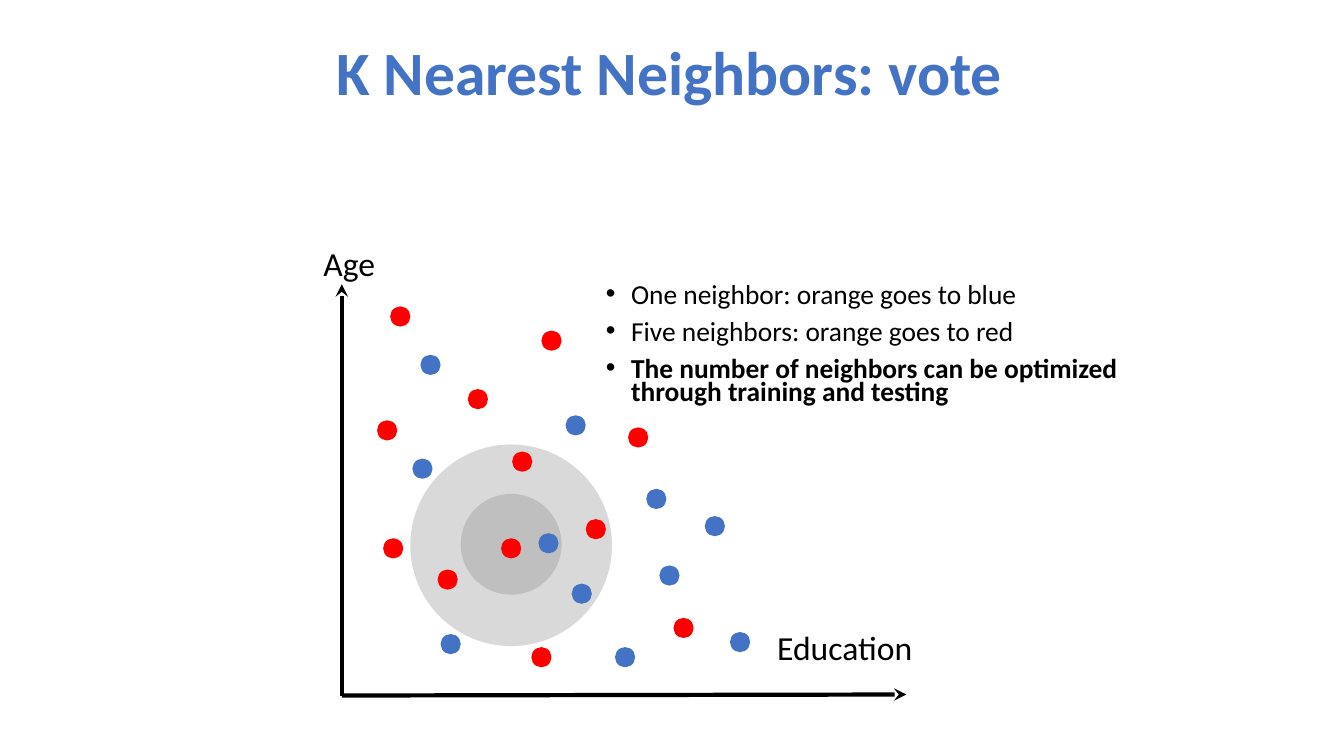
from dataclasses import dataclass

from lxml.etree import SubElement
from pptx import Presentation
from pptx.dml.color import RGBColor
from pptx.enum.shapes import MSO_CONNECTOR, MSO_SHAPE
from pptx.enum.text import MSO_ANCHOR, MSO_AUTO_SIZE, PP_ALIGN
from pptx.oxml.ns import qn
from pptx.util import Inches, Pt


@dataclass(frozen=True)
class Theme:
    font: str = "Calibri"
    ink: str = "000000"
    blue: str = "4472C4"
    red: str = "FF0000"
    outer: str = "D9D9D9"
    inner: str = "BFBFBF"
    title: float = 44
    label: float = 24
    body: float = 19.6
    axis: float = 3
    dot: float = 0.2


@dataclass(frozen=True)
class Disc:
    left: float
    top: float
    size: float
    color: str


@dataclass(frozen=True)
class Axis:
    end: tuple[float, float]
    name: str
    box: tuple[float, float, float, float]


THEME = Theme()
ORIGIN = (3.39, 6.9)
AXES = [
    Axis((8.99, 6.89), "Education", (7.61, 6.17, 2.17, 0.5)),
    Axis((3.39, 2.82), "Age", (3.11, 2.36, 1.56, 0.5)),
]
RINGS = [
    Disc(4.07, 4.41, 2, THEME.outer),
    Disc(4.57, 4.9, 1, THEME.inner),
]
BLUES = [
    (5.61, 4.12), (5.34, 5.29), (5.67, 5.79), (6.54, 5.61),
    (6.99, 5.12), (4.17, 3.52), (6.41, 4.85), (4.37, 6.29),
    (7.24, 6.27), (4.09, 4.55), (6.1, 6.42),
]
REDS = [
    (4.34, 5.65), (6.23, 4.24), (3.74, 4.17), (5.08, 4.48),
    (5.37, 3.28), (6.68, 6.13), (3.87, 3.04), (5.81, 5.15),
    (5.27, 6.42), (4.64, 3.86), (3.8, 5.34),
]
QUERY = Disc(4.97, 5.34, THEME.dot, THEME.red)
NOTES = [
    ("One neighbor: orange goes to blue", False),
    ("Five neighbors: orange goes to red", False),
    ("The number of neighbors can be optimized through training and testing", True),
]


def place(shape, left: float, top: float, width: float, height: float) -> None:
    shape.left, shape.top = Inches(left), Inches(top)
    shape.width, shape.height = Inches(width), Inches(height)


def write(para, text: str, *, size: float, color: str = THEME.ink,
          bold: bool = False, align=None, pitch=None, before=None) -> None:
    run = para.add_run()
    run.text = text
    font = run.font
    font.name, font.size, font.bold = THEME.font, Pt(size), bold
    font.color.rgb = RGBColor.from_string(color)
    para.alignment = align
    para.line_spacing = pitch
    para.space_before = before


def bullet(para, indent: float) -> None:
    props = para._p.get_or_add_pPr()
    props.set("marL", str(Inches(indent)))
    props.set("indent", str(-Inches(indent)))
    SubElement(props, qn("a:buFont")).set("typeface", "Arial")
    SubElement(props, qn("a:buChar")).set("char", "•")


def draw_disc(shapes, disc: Disc) -> None:
    oval = shapes.add_shape(MSO_SHAPE.OVAL, Inches(disc.left), Inches(disc.top),
                            Inches(disc.size), Inches(disc.size))
    oval.shadow.inherit = False
    oval.fill.solid()
    oval.fill.fore_color.rgb = RGBColor.from_string(disc.color)
    oval.line.fill.background()


def draw_class(shapes, spots: list[tuple[float, float]], color: str) -> None:
    """Draw all points of one class as a group."""
    group = shapes.add_group_shape()
    for left, top in spots:
        draw_disc(group.shapes, Disc(left, top, THEME.dot, color))


def draw_axis(shapes, axis: Axis) -> None:
    ends = [Inches(value) for value in ORIGIN + axis.end]
    line = shapes.add_connector(MSO_CONNECTOR.STRAIGHT, *ends)
    line.line.color.rgb = RGBColor.from_string(THEME.ink)
    line.line.width = Pt(THEME.axis)
    SubElement(line.line._get_or_add_ln(), qn("a:tailEnd")).set("type", "stealth")
    SubElement(line._element.spPr, qn("a:effectLst"))

    label = shapes.add_textbox(*[Inches(value) for value in axis.box])
    frame = label.text_frame
    frame.word_wrap = True
    frame.auto_size = MSO_AUTO_SIZE.SHAPE_TO_FIT_TEXT
    write(frame.paragraphs[0], axis.name, size=THEME.label)


def fill_title(shape) -> None:
    place(shape, 0.89, 0.02, 11.5, 1.45)
    frame = shape.text_frame
    frame.auto_size = MSO_AUTO_SIZE.NONE
    frame.vertical_anchor = MSO_ANCHOR.MIDDLE
    write(frame.paragraphs[0], "K Nearest Neighbors: vote", size=THEME.title,
          color=THEME.blue, bold=True, align=PP_ALIGN.CENTER, pitch=0.9)


def fill_body(shape) -> None:
    place(shape, 5.91, 2.79, 5.28, 1.37)
    frame = shape.text_frame
    frame.auto_size = MSO_AUTO_SIZE.NONE
    frame.vertical_anchor = MSO_ANCHOR.TOP
    for index, (text, bold) in enumerate(NOTES):
        para = frame.add_paragraph() if index else frame.paragraphs[0]
        write(para, text, size=THEME.body, bold=bold, pitch=0.7, before=Pt(10))
        bullet(para, 0.25)


def main() -> None:
    deck = Presentation()
    deck.slide_width, deck.slide_height = Inches(13.33), Inches(7.5)
    slide = deck.slides.add_slide(deck.slide_layouts[1])
    shapes = slide.shapes
    fill_title(shapes.title)
    fill_body(slide.placeholders[1])
    for ring in RINGS:
        draw_disc(shapes, ring)
    for axis in AXES:
        draw_axis(shapes, axis)
    draw_class(shapes, BLUES, THEME.blue)
    draw_class(shapes, REDS, THEME.red)
    draw_disc(shapes, QUERY)
    deck.save("out.pptx")


if __name__ == "__main__":
    main()
